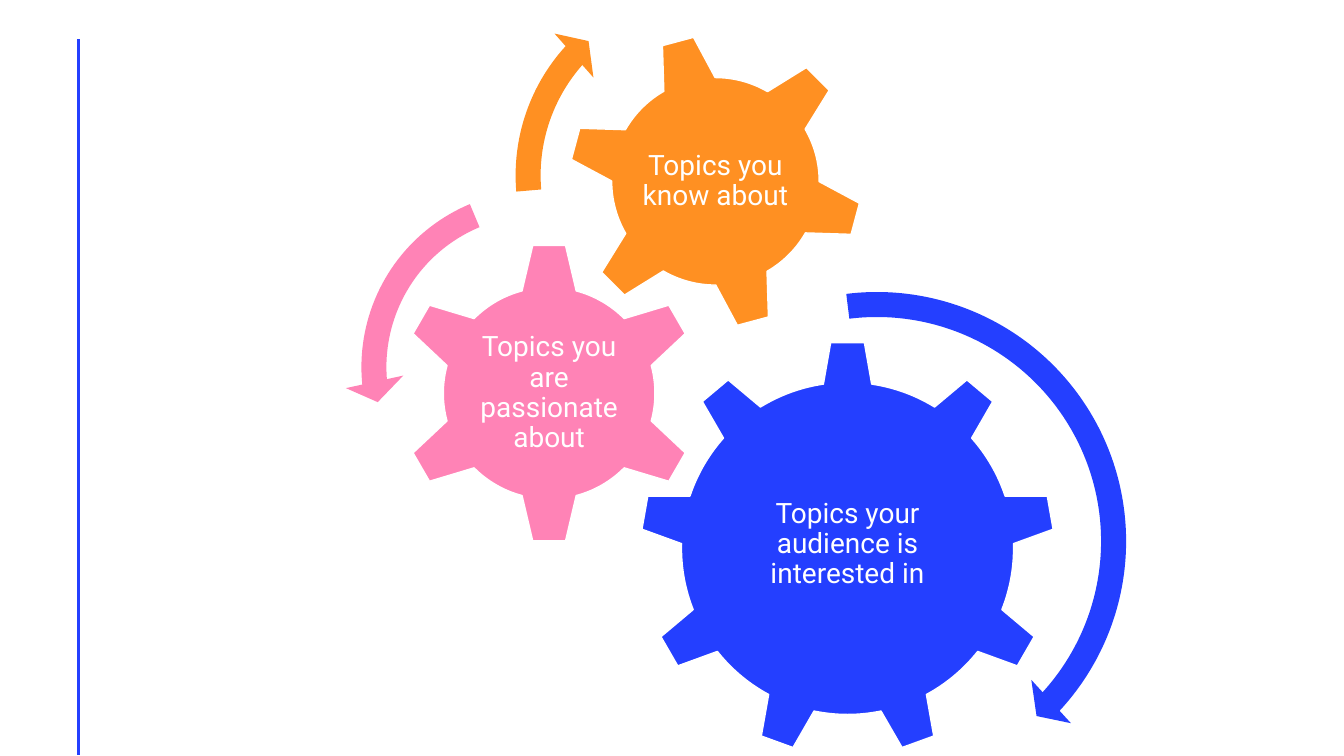
from lxml import etree
from pptx import Presentation
from pptx.dml.color import RGBColor
from pptx.enum.shapes import MSO_CONNECTOR, MSO_SHAPE
from pptx.enum.text import MSO_ANCHOR, PP_ALIGN
from pptx.oxml.ns import qn
from pptx.util import Cm, Pt

STRAIGHT = MSO_CONNECTOR.STRAIGHT
GEAR_6, GEAR_9 = MSO_SHAPE.GEAR_6, MSO_SHAPE.GEAR_9
CLOCKWISE, COUNTERCLOCKWISE = MSO_SHAPE.CIRCULAR_ARROW, MSO_SHAPE.LEFT_CIRCULAR_ARROW
MIDDLE, CENTER = MSO_ANCHOR.MIDDLE, PP_ALIGN.CENTER

COLORS = {"blue": "243FFF", "pink": "FF83B6", "orange": "FF9022", "white": "FFFFFF"}
FRAME_FORMAT = {
    "word_wrap": True,
    "vertical_anchor": MIDDLE,
    "margin_left": Cm(0.08),
    "margin_right": Cm(0.08),
    "margin_top": Cm(0.08),
    "margin_bottom": Cm(0.08),
}
PARAGRAPH_FORMAT = {"alignment": CENTER, "line_spacing": 0.9}
FONT_FORMAT = {"name": "Roboto", "size": Pt(20)}

BAND_WIDTH = 0.63
HEAD_WIDTH = 0.74
ANGLE_UNIT = 0.6

GEARS = [
    {"kind": GEAR_9, "color": "blue", "center": (21.36, 13.82), "size": 10.46,
     "rotation": 0, "label_size": (6.27, 5.38), "label_rise": 0.1,
     "text": "Topics your audience is interested in"},
    {"kind": GEAR_6, "color": "pink", "center": (13.84, 9.91), "size": 7.62,
     "rotation": 0, "label_size": (3.78, 3.76), "label_rise": 0,
     "text": "Topics you are passionate about"},
    {"kind": GEAR_6, "color": "orange", "center": (18.03, 4.57), "size": 7.47,
     "rotation": 345, "label_size": (4.19, 4.19), "label_rise": 0,
     "text": "Topics you know about"},
]
ARROWS = [
    {"kind": CLOCKWISE, "color": "blue", "center": (22.1, 13.64), "size": 13.41,
     "angles": (4.98, 42.61, 262.94)},
    {"kind": COUNTERCLOCKWISE, "color": "pink", "center": (13.56, 9.25), "size": 9.75,
     "angles": (7.17, 174.82, 247.3)},
    {"kind": CLOCKWISE, "color": "orange", "center": (17.83, 4.42), "size": 10.52,
     "angles": (6.57, 221.9, 175.14)},
]


def color_of(name):
    return RGBColor.from_string(COLORS[name])


def apply_format(target, values):
    for name, value in values.items():
        setattr(target, name, value)


def box_around(center, width, height):
    x, y = center
    return Cm(x - width / 2), Cm(y - height / 2), Cm(width), Cm(height)


def add_filled_shape(shapes, item):
    box = box_around(item["center"], item["size"], item["size"])
    shape = shapes.add_shape(item["kind"], *box)
    shape.shadow.inherit = False
    shape.fill.solid()
    shape.fill.fore_color.rgb = color_of(item["color"])
    return shape


def add_label(shapes, box, text):
    frame = shapes.add_textbox(*box).text_frame
    apply_format(frame, FRAME_FORMAT)
    paragraph = frame.paragraphs[0]
    paragraph.text = text
    apply_format(paragraph, PARAGRAPH_FORMAT)
    font = paragraph.runs[0].font
    apply_format(font, FONT_FORMAT)
    font.color.rgb = color_of("white")


def add_gear(shapes, gear):
    shape = add_filled_shape(shapes, gear)
    shape.rotation = gear["rotation"]
    shape.line.color.rgb = color_of("white")
    shape.line.width = Pt(1)
    x, y = gear["center"]
    label_box = box_around((x, y - gear["label_rise"]), *gear["label_size"])
    add_label(shapes, label_box, gear["text"])


def add_turning_arrow(shapes, arrow):
    shape = add_filled_shape(shapes, arrow)
    shape.line.fill.background()
    size = arrow["size"]
    angles = [angle * ANGLE_UNIT for angle in arrow["angles"]]
    for index, value in enumerate([BAND_WIDTH / size, *angles, HEAD_WIDTH / size]):
        shape.adjustments[index] = value


def add_side_rule(shapes, x, top, bottom):
    rule = shapes.add_connector(STRAIGHT, Cm(x), Cm(top), Cm(x), Cm(bottom))
    rule.line.color.rgb = color_of("blue")
    rule.line.width = Pt(2)
    etree.SubElement(rule.element.spPr, qn("a:effectLst"))


def add_gear_diagram(shapes):
    diagram = shapes.add_group_shape()
    for gear in GEARS:
        add_gear(diagram.shapes, gear)
    for arrow in ARROWS:
        add_turning_arrow(diagram.shapes, arrow)


def main():
    presentation = Presentation()
    presentation.slide_width = Cm(33.87)
    presentation.slide_height = Cm(19.05)
    slide = presentation.slides.add_slide(presentation.slide_layouts.get_by_name("Blank"))
    add_side_rule(slide.shapes, 1.98, 0.99, 19.02)
    add_gear_diagram(slide.shapes)
    presentation.save("out.pptx")


if __name__ == "__main__":
    main()
